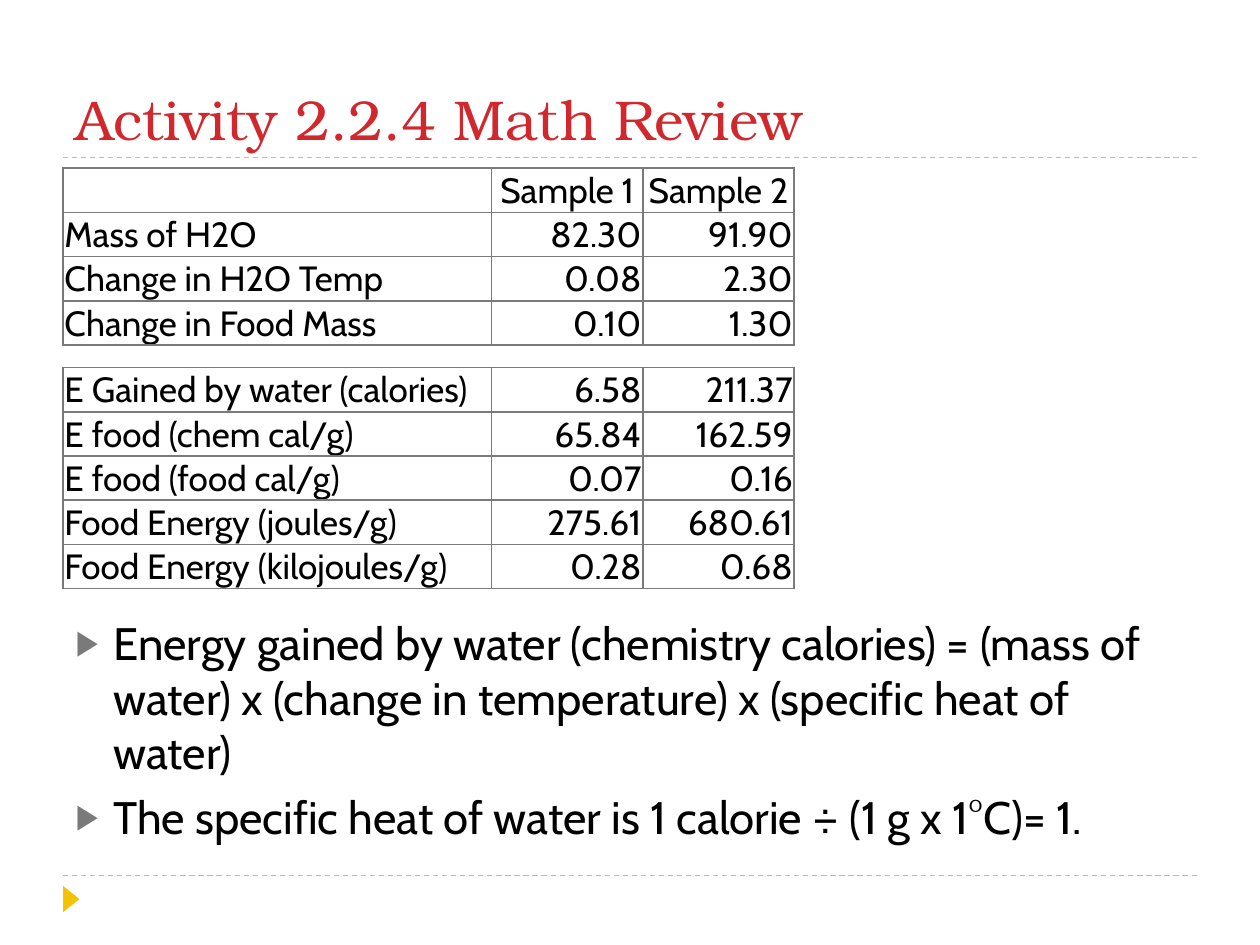
from dataclasses import dataclass

from lxml.etree import SubElement
from pptx import Presentation
from pptx.dml.color import RGBColor
from pptx.enum.dml import MSO_LINE
from pptx.enum.shapes import MSO_CONNECTOR, MSO_SHAPE
from pptx.enum.text import MSO_ANCHOR, MSO_AUTO_SIZE, PP_ALIGN
from pptx.oxml.ns import qn
from pptx.util import Cm, Pt

TITLE = "Activity 2.2.4 Math Review"
MEASUREMENTS = [
    ("", "Sample 1", "Sample 2"),
    ("Mass of H2O", "82.30", "91.90"),
    ("Change in H2O Temp", "0.08", "2.30"),
    ("Change in Food Mass", "0.10", "1.30"),
]
RESULTS = [
    ("E Gained by water (calories)", "6.58", "211.37"),
    ("E food (chem cal/g)", "65.84", "162.59"),
    ("E food (food cal/g)", "0.07", "0.16"),
    ("Food Energy (joules/g)", "275.61", "680.61"),
    ("Food Energy (kilojoules/g)", "0.28", "0.68"),
]
FORMULAS = [
    "Energy gained by water (chemistry calories) = (mass of water) x "
    "(change in temperature) x (specific heat of water)",
    "The specific heat of water is 1 calorie ÷ (1 g x 1°C)= 1.",
]


@dataclass(frozen=True)
class Theme:
    title_font: str = "TeX Gyre Bonum"
    body_font: str = "Cabin"
    title_size: int = 32
    body_size: int = 26
    table_size: int = 20
    red: str = "D1282E"
    yellow: str = "F5C201"
    grey: str = "7A7A7A"
    black: str = "000000"


THEME = Theme()
LEFT, CONTENT_WIDTH = 1.27, 22.86
COLUMN_WIDTHS = (8.64, 3.05, 3.05)
ROW_HEIGHT = 0.89


def format_runs(paragraph, font_name, size, color):
    for run in paragraph.runs:
        run.font.name = font_name
        run.font.size = Pt(size)
        run.font.color.rgb = RGBColor.from_string(color)


def place(placeholder, left, top, width, height, anchor):
    placeholder.left, placeholder.top = Cm(left), Cm(top)
    placeholder.width, placeholder.height = Cm(width), Cm(height)
    frame = placeholder.text_frame
    frame.word_wrap = True
    frame.auto_size = MSO_AUTO_SIZE.NONE
    frame.vertical_anchor = anchor
    return frame


def add_dashed_rule(slide, y):
    rule = slide.shapes.add_connector(
        MSO_CONNECTOR.STRAIGHT, Cm(LEFT), Cm(y), Cm(LEFT + CONTENT_WIDTH), Cm(y))
    rule.line.color.rgb = RGBColor.from_string(THEME.yellow)
    rule.line.width = Pt(0.75)
    rule.line.dash_style = MSO_LINE.DASH
    SubElement(rule._element.spPr, qn("a:effectLst"))


def add_corner_marker(slide):
    marker = slide.shapes.add_shape(
        MSO_SHAPE.ISOSCELES_TRIANGLE, Cm(1.17), Cm(17.96), Cm(0.53), Cm(0.33))
    marker.rotation = 90
    marker.shadow.inherit = False
    marker.fill.solid()
    marker.fill.fore_color.rgb = RGBColor.from_string(THEME.yellow)
    marker.line.fill.background()


def add_bullet(paragraph):
    properties = paragraph._p.get_or_add_pPr()
    properties.set("marL", str(Cm(0.76)))
    properties.set("indent", str(-Cm(0.76)))
    color = SubElement(properties, qn("a:buClr"))
    SubElement(color, qn("a:srgbClr"), val=THEME.grey)
    SubElement(properties, qn("a:buSzPct"), val="76000")
    SubElement(properties, qn("a:buChar"), char="▶")


def add_borders(cell):
    properties = cell._tc.get_or_add_tcPr()
    for position, side in enumerate(("lnL", "lnR", "lnT", "lnB")):
        border = SubElement(properties, qn(f"a:{side}"), w=str(Pt(1)))
        fill = SubElement(border, qn("a:solidFill"))
        SubElement(fill, qn("a:srgbClr"), val=THEME.grey)
        properties.insert(position, border)


def add_sample_table(slide, rows, top):
    table = slide.shapes.add_table(
        len(rows), len(COLUMN_WIDTHS), Cm(LEFT), Cm(top),
        Cm(sum(COLUMN_WIDTHS)), Cm(ROW_HEIGHT * len(rows))).table
    table.first_row = table.horz_banding = False
    for column, width in zip(table.columns, COLUMN_WIDTHS):
        column.width = Cm(width)
    for r, row in enumerate(rows):
        table.rows[r].height = Cm(ROW_HEIGHT)
        is_header = row[0] == ""
        for c, value in enumerate(row):
            cell = table.cell(r, c)
            cell.fill.background()
            cell.margin_left = cell.margin_right = cell.margin_top = Cm(0.03)
            cell.margin_bottom = 0
            cell.vertical_anchor = MSO_ANCHOR.BOTTOM
            cell.text_frame.text = value
            paragraph = cell.text_frame.paragraphs[0]
            if is_header:
                paragraph.alignment = PP_ALIGN.CENTER
            else:
                paragraph.alignment = PP_ALIGN.RIGHT if c else PP_ALIGN.LEFT
            format_runs(paragraph, THEME.body_font, THEME.table_size, THEME.black)
            add_borders(cell)


def main():
    deck = Presentation()
    deck.slide_width, deck.slide_height = Cm(25.4), Cm(19.05)
    slide = deck.slides.add_slide(deck.slide_layouts[1])

    for y in (17.65, 3.18):
        add_dashed_rule(slide, y)
    add_corner_marker(slide)

    title = place(slide.shapes.title, LEFT, 0.64, CONTENT_WIDTH, 2.54, MSO_ANCHOR.BOTTOM)
    title.text = TITLE
    title.paragraphs[0].alignment = PP_ALIGN.LEFT
    format_runs(title.paragraphs[0], THEME.title_font, THEME.title_size, THEME.red)

    body = place(slide.placeholders[1], LEFT, 12.27, 23.04, 5.03, MSO_ANCHOR.TOP)
    body.text = "\n".join(FORMULAS)
    for number, paragraph in enumerate(body.paragraphs):
        add_bullet(paragraph)
        paragraph.space_before = Pt(6 if number else 0)
        format_runs(paragraph, THEME.body_font, THEME.body_size, THEME.black)

    add_sample_table(slide, MEASUREMENTS, 3.39)
    add_sample_table(slide, RESULTS, 7.41)
    deck.save("out.pptx")


if __name__ == "__main__":
    main()
